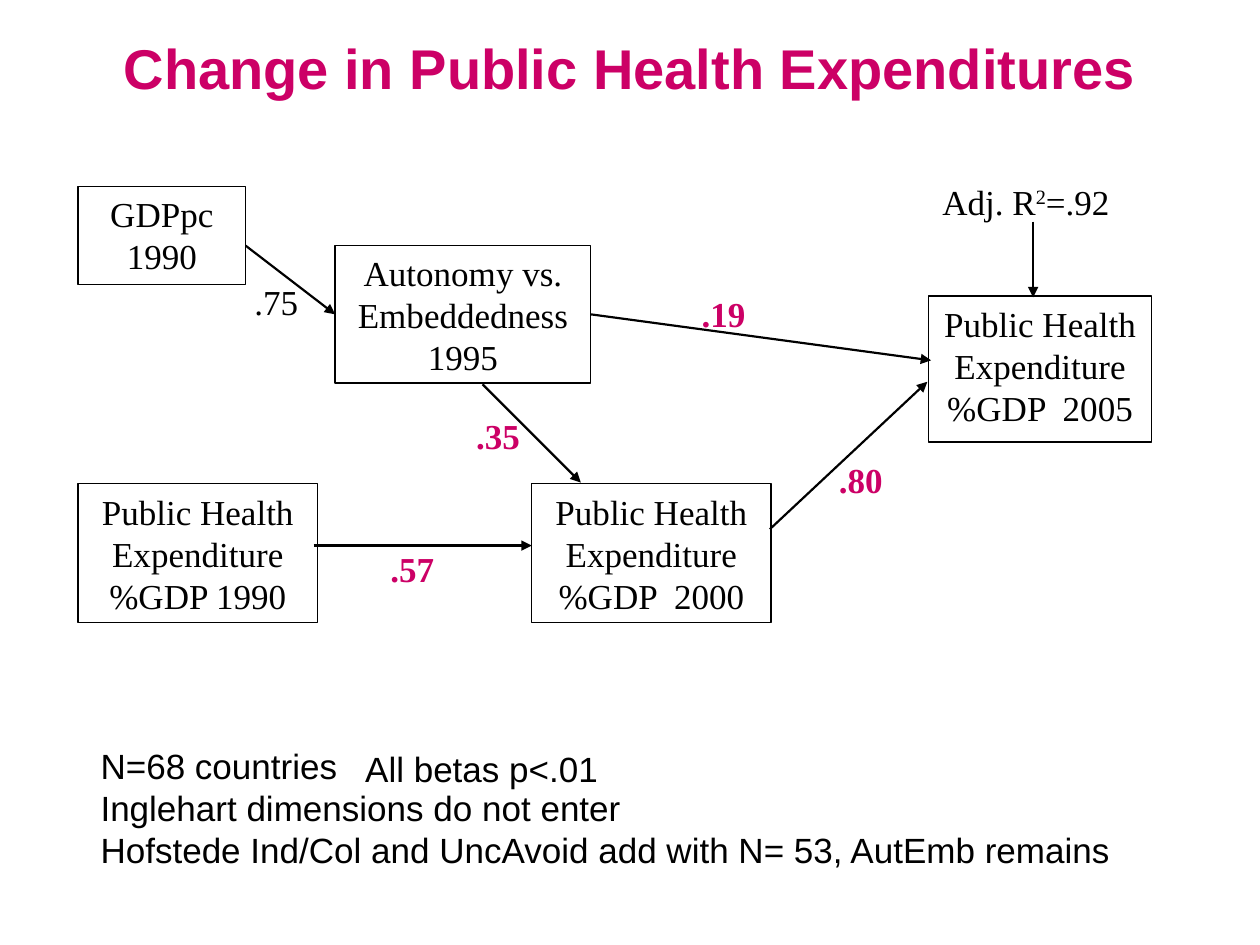
import pptx
import pptx.dml.color
import pptx.enum.shapes
import pptx.enum.text
import pptx.oxml.ns
import pptx.util
from lxml import etree

Inches = pptx.util.Inches
BLACK = "000000"
WHITE = "FFFFFF"
MAGENTA = "CC0066"
SERIF = "Times New Roman"
SANS = "Arial"
TOP, LEFT, BOTTOM, RIGHT = range(4)


def rgb(value):
    """Return the colour for a hex string."""
    return pptx.dml.color.RGBColor.from_string(value)


def write_lines(shape, lines, font, size=20, color=BLACK, bold=False, centered=False):
    """Fill a shape with one top-anchored paragraph per line."""
    frame = shape.text_frame
    frame.word_wrap = True
    frame.vertical_anchor = pptx.enum.text.MSO_ANCHOR.TOP
    frame.text = "\n".join(lines)
    alignment = pptx.enum.text.PP_ALIGN
    for paragraph in frame.paragraphs:
        paragraph.alignment = alignment.CENTER if centered else alignment.LEFT
        paragraph.font.name = font
        paragraph.font.size = pptx.util.Pt(size)
        paragraph.font.bold = bold
        paragraph.font.color.rgb = rgb(color)


def add_text(slide, left, top, width, height, lines, font, **style):
    """Add a text box and return it."""
    shape = slide.shapes.add_textbox(
        Inches(left), Inches(top), Inches(width), Inches(height))
    write_lines(shape, lines, font, **style)
    return shape


def add_variable(slide, left, top, width, height, *lines):
    """Add an outlined box that names a variable of the path model."""
    shape = slide.shapes.add_shape(
        pptx.enum.shapes.MSO_SHAPE.RECTANGLE,
        Inches(left), Inches(top), Inches(width), Inches(height))
    shape.shadow.inherit = False
    shape.fill.solid()
    shape.fill.fore_color.rgb = rgb(WHITE)
    shape.line.color.rgb = rgb(BLACK)
    shape.line.width = pptx.util.Pt(0.75)
    write_lines(shape, lines, SERIF, centered=True)
    return shape


def add_arrow(slide, start, end, source=None, target=None):
    """Add an arrow, joined to (shape, side) pairs where they are given."""
    connector = slide.shapes.add_connector(
        pptx.enum.shapes.MSO_CONNECTOR.STRAIGHT,
        *(Inches(value) for value in start + end))
    connector.line.color.rgb = rgb(BLACK)
    connector.line.width = pptx.util.Pt(1.25)
    qualified = pptx.oxml.ns.qn
    line = connector.line._get_or_add_ln()
    etree.SubElement(line, qualified("a:tailEnd"), type="triangle")
    etree.SubElement(connector._element.spPr, qualified("a:effectLst"))
    if source:
        connector.begin_connect(*source)
    if target:
        connector.end_connect(*target)


def add_beta(slide, left, top, value, color=MAGENTA, bold=True):
    """Add the coefficient beside an arrow."""
    add_text(slide, left, top, 0.75, 0.33, [value], SERIF, color=color, bold=bold)


def add_fit(slide):
    """Add the explained variance with its raised exponent."""
    shape = add_text(slide, 7.38, 1.38, 1.69, 0.44, ["Adj. R"], SERIF)
    paragraph = shape.text_frame.paragraphs[0]
    exponent = paragraph.add_run()
    exponent.text = "2"
    exponent._r.get_or_add_rPr().set("baseline", "30000")
    paragraph.add_run().text = "=.92"


def main():
    """Build the slide and save it."""
    presentation = pptx.Presentation()
    presentation.slide_width = Inches(10)
    presentation.slide_height = Inches(7.5)
    slide = presentation.slides.add_slide(presentation.slide_layouts[6])

    expenditure = "Public Health Expenditure %GDP "
    add_variable(slide, 0.62, 1.48, 1.33, 0.78, "GDPpc", "1990")
    add_variable(slide, 0.62, 3.84, 1.9, 1.1, expenditure + "1990")
    autonomy = add_variable(
        slide, 2.66, 1.95, 2.03, 1.09, "Autonomy vs. Embeddedness", "1995")
    add_variable(slide, 4.22, 3.84, 1.9, 1.1, expenditure + " 2000")
    add_variable(slide, 7.37, 2.35, 1.77, 1.16, expenditure + " 2005")

    add_arrow(slide, (2.49, 4.33), (4.22, 4.33))
    add_arrow(slide, (6.11, 4.2), (7.36, 3.03))
    add_arrow(slide, (4.69, 2.5), (7.39, 2.86), source=(autonomy, RIGHT))
    add_arrow(slide, (1.95, 1.95), (2.66, 2.5), target=(autonomy, LEFT))
    add_arrow(slide, (3.83, 3.05), (4.61, 3.83))
    add_arrow(slide, (8.2, 1.76), (8.2, 2.36))

    add_beta(slide, 1.92, 2.18, ".75", BLACK, False)
    add_beta(slide, 3, 4.3, ".57")
    add_beta(slide, 6.56, 3.59, ".80")
    add_beta(slide, 5.47, 2.27, ".19")
    add_beta(slide, 3.68, 3.24, ".35")
    add_fit(slide)

    add_text(slide, 0, 0.22, 10, 0.64, ["Change in Public Health Expenditures"],
             SANS, size=32, color=MAGENTA, bold=True, centered=True)
    add_text(slide, 0.7, 5.86, 8.36, 1.41, [
        "N=68 countries",
        "Inglehart dimensions do not enter",
        "Hofstede Ind/Col and UncAvoid add with N= 53, AutEmb remains",
    ], SANS)
    add_text(slide, 2.8, 5.88, 2.76, 0.44, ["All betas p<.01"], SANS)

    presentation.save("out.pptx")


if __name__ == "__main__":
    main()
